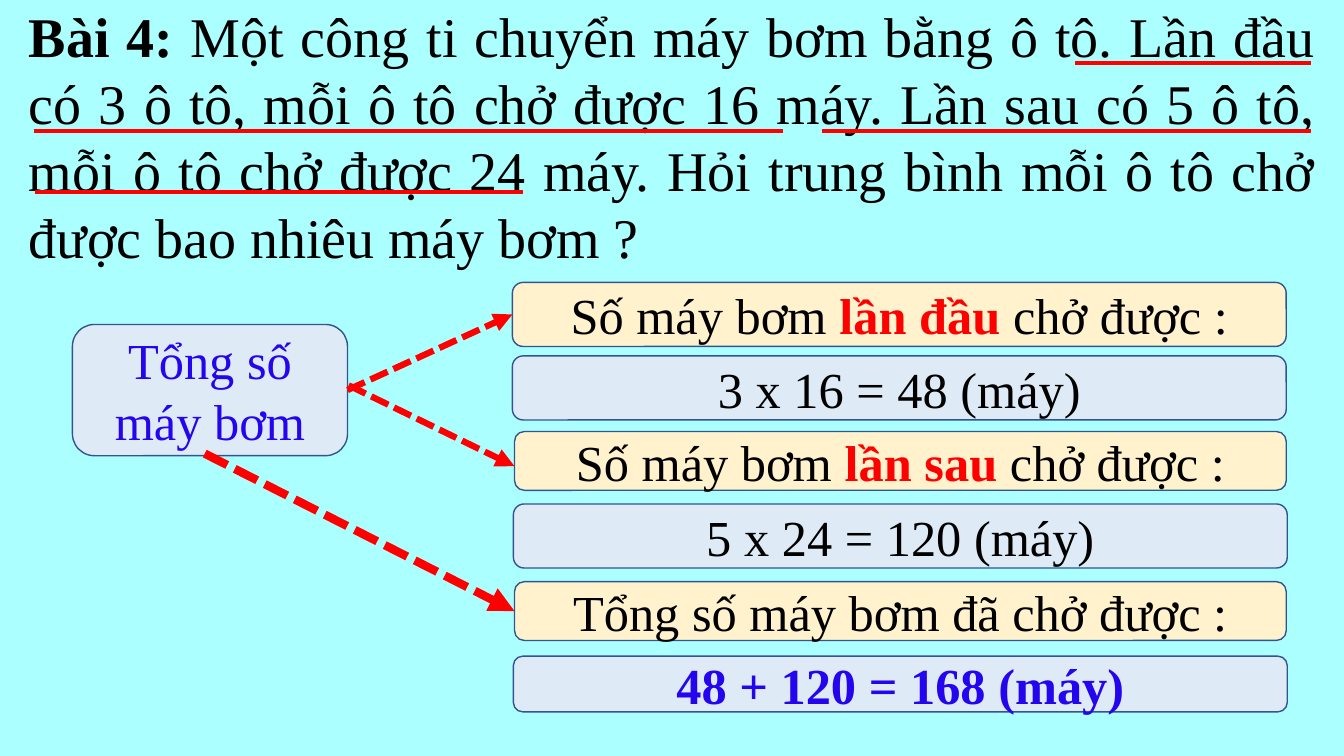
"""Build the pump word problem slide with its solution steps."""
from dataclasses import dataclass

from pptx import Presentation
from pptx import util as u
from pptx.dml.color import RGBColor as Rgb
from pptx.enum import dml, shapes, text
from pptx.oxml import ns, xmlchemy

PX = 9525


@dataclass(frozen=True)
class Theme:
    """Colours, font and type sizes of the slide."""
    back: str = "ABFFFF"
    ink: str = "000000"
    red: str = "FF0000"
    blue: str = "2504EE"
    edge: str = "325491"
    cream: str = "FFF2CC"
    pale: str = "DEEBF7"
    font: str = "Times New Roman"
    head: int = 40
    body: int = 36


T = Theme()

TASK = ("Một công ti chuyển máy bơm bằng ô tô. Lần đầu có 3 ô tô, mỗi ô tô "
        "chở được 16 máy. Lần sau có 5 ô tô, mỗi ô tô chở được 24 máy. Hỏi "
        "trung bình mỗi ô tô chở được bao nhiêu máy bơm ?")
RULES = [(1024, 1249, 60), (32, 746, 125), (783, 1249, 125), (33, 498, 183)]


def plain(words):
    """Return one regular black run."""
    return words, T.ink, False


def count(turn):
    """Return the runs that ask for the pumps of one turn."""
    return [plain("Số máy bơm "), (turn, T.red, True), plain("chở được :")]


STEPS = [
    ((488, 269, 737, 61), T.cream, count("lần đầu ")),
    ((488, 339, 737, 61), T.pale, [plain("3 x 16 = 48 (máy)")]),
    ((490, 411, 735, 56), T.cream, count("lần sau ")),
    ((489, 480, 737, 61), T.pale, [plain("5 x 24 = 120 (máy)")]),
    ((490, 554, 735, 56), T.cream, [plain("Tổng số máy bơm đã chở được :")]),
    ((489, 625, 737, 53), T.pale, [("48 + 120 = 168 (máy)", T.blue, True)]),
]


def px(*nums):
    """Turn pixels into EMU."""
    return [u.Emu(n * PX) for n in nums]


def write(frame, runs, size, align):
    """Fill a text frame with one paragraph of coloured runs."""
    frame.word_wrap = True
    frame.auto_size = text.MSO_AUTO_SIZE.NONE
    frame.vertical_anchor = text.MSO_ANCHOR.MIDDLE
    para = frame.paragraphs[0]
    para.alignment = align
    for words, color, bold in runs:
        run = para.add_run()
        run.text = words
        run.font.name = T.font
        run.font.size = u.Pt(size)
        run.font.bold = bold
        run.font.color.rgb = Rgb.from_string(color)


def title(slide, runs):
    """Place the word problem in the title placeholder."""
    head = slide.shapes.title
    head.left, head.top, head.width, head.height = px(18, 8, 1244, 242)
    write(head.text_frame, runs, T.head, text.PP_ALIGN.JUSTIFY)


def box(slide, area, fill, runs, tight=True):
    """Draw a rounded box with centred text."""
    shape = slide.shapes.add_shape(
        shapes.MSO_SHAPE.ROUNDED_RECTANGLE, *px(*area))
    shape.shadow.inherit = False
    shape.fill.solid()
    shape.fill.fore_color.rgb = Rgb.from_string(fill)
    shape.line.color.rgb = Rgb.from_string(T.edge)
    shape.line.width = u.Pt(1)
    frame = shape.text_frame
    if tight:
        frame.margin_left = frame.margin_right = 0
        frame.margin_top = frame.margin_bottom = 0
    write(frame, runs, T.body, text.PP_ALIGN.CENTER)
    return shape


def rule(slide, ends, width):
    """Draw a straight red line."""
    line = slide.shapes.add_connector(
        shapes.MSO_CONNECTOR.STRAIGHT, *px(*ends))
    line.line.color.rgb = Rgb.from_string(T.red)
    line.line.width = u.Pt(width)
    line._element.spPr.append(xmlchemy.OxmlElement("a:effectLst"))
    return line


def arrow(slide, ends, width):
    """Draw a dashed red arrow."""
    line = rule(slide, ends, width)
    line.line.dash_style = dml.MSO_LINE.SQUARE_DOT
    tip = xmlchemy.OxmlElement("a:tailEnd")
    tip.set("type", "triangle")
    line._element.spPr.find(ns.qn("a:ln")).append(tip)
    return line


def main():
    """Build and save the slide."""
    deck = Presentation()
    deck.slide_width, deck.slide_height = px(1280, 720)
    slide = deck.slides.add_slide(deck.slide_layouts[5])
    slide.background.fill.solid()
    slide.background.fill.fore_color.rgb = Rgb.from_string(T.back)

    title(slide, [("Bài 4: ", T.ink, True), plain(TASK)])
    for left, right, y in RULES:
        rule(slide, (left, y, right, y), 3)

    total = box(slide, (69, 309, 262, 125), T.pale,
                [("Tổng số máy bơm", T.blue, False)], tight=False)
    steps = [box(slide, *step) for step in STEPS]

    first = arrow(slide, (331, 372, 488, 300), 4.5)
    first.begin_connect(total, 3)
    first.end_connect(steps[0], 1)
    arrow(slide, (332, 367, 490, 444), 4.5)
    last = arrow(slide, (195, 432, 490, 582), 6)
    last.end_connect(steps[4], 1)
    deck.save("out.pptx")


if __name__ == "__main__":
    main()
